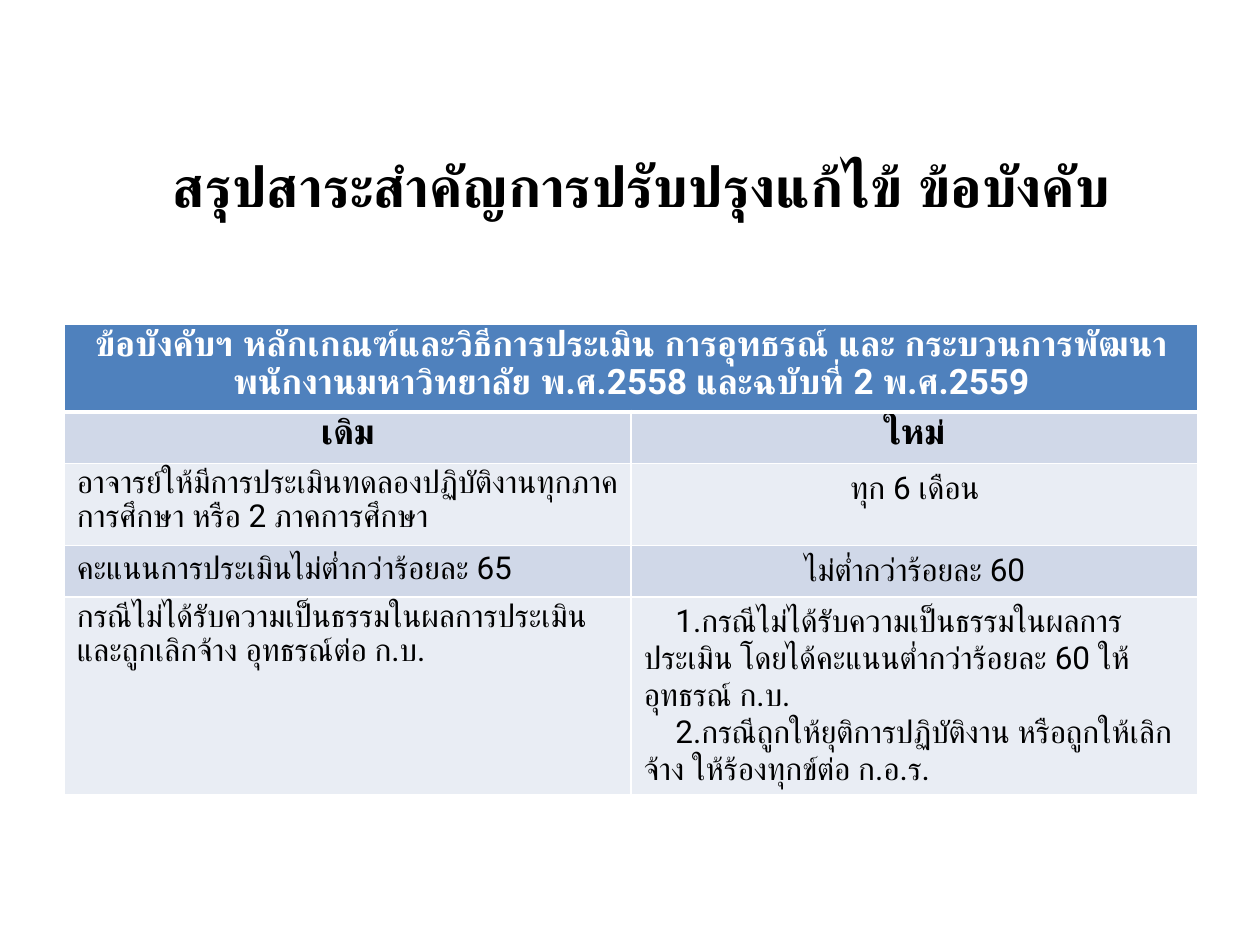
from lxml import etree
from pptx import Presentation
from pptx.dml.color import RGBColor
from pptx.enum.text import MSO_ANCHOR, PP_ALIGN as Align
from pptx.oxml.ns import qn
from pptx.util import Inches, Pt

FONT = "Roboto"
BLACK = RGBColor(0x00, 0x00, 0x00)
WHITE = RGBColor(0xFF, 0xFF, 0xFF)
BLUE = RGBColor(0x4F, 0x81, 0xBD)
BAND_DARK = RGBColor(0xD0, 0xD8, 0xE8)
BAND_LIGHT = RGBColor(0xE9, 0xED, 0xF4)
TIGHT = 0.95

TITLE = "สรุปสาระสำคัญการปรับปรุงแก้ไข้ ข้อบังคับ"
HEADING = ("ข้อบังคับฯ หลักเกณฑ์และวิธีการประเมิน การอุทธรณ์ และ "
           "กระบวนการพัฒนาพนักงานมหาวิทยาลัย พ.ศ.2558 และฉบับที่ 2 พ.ศ.2559")
COLUMN_HEADS = ["เดิม", "ใหม่"]
OLD_RULES = [
    "อาจารย์ให้มีการประเมินทดลองปฏิบัติงานทุกภาคการศึกษา หรือ 2 ภาคการศึกษา",
    "คะแนนการประเมินไม่ต่ำกว่าร้อยละ 65",
    "กรณีไม่ได้รับความเป็นธรรมในผลการประเมินและถูกเลิกจ้าง อุทธรณ์ต่อ ก.บ.",
]
NEW_RULES = ["ทุก 6 เดือน", "ไม่ต่ำกว่าร้อยละ 60"]
APPEALS = [
    "1.กรณีไม่ได้รับความเป็นธรรมในผลการประเมิน โดยได้คะแนนต่ำกว่าร้อยละ 60 ให้อุทธรณ์ ก.บ.",
    "2.กรณีถูกให้ยุติการปฏิบัติงาน หรือถูกให้เลิกจ้าง ให้ร้องทุกข์ต่อ ก.อ.ร.",
]
ROW_HEIGHTS = [0.7, 0.41, 0.65, 0.41, 1.56]


def write(tf, *lines, size=18, bold=False, color=BLACK, align=Align.LEFT,
          spacing=1.0, indent=0):
    for i, line in enumerate(lines):
        p = tf.add_paragraph() if i else tf.paragraphs[0]
        p.alignment = align
        p.line_spacing = spacing
        if indent:
            p._p.get_or_add_pPr().set("indent", str(Inches(indent)))
        r = p.add_run()
        r.text = line
        r.font.name = FONT
        r.font.size = Pt(size)
        r.font.bold = bold
        r.font.color.rgb = color


def set_borders(cell, **widths):
    tcPr = cell._tc.get_or_add_tcPr()
    for i, side in enumerate(("L", "R", "T", "B")):
        ln = etree.Element(qn(f"a:ln{side}"), w=str(Pt(widths.get(side, 1))))
        fill = etree.SubElement(ln, qn("a:solidFill"))
        etree.SubElement(fill, qn("a:srgbClr"), val=str(WHITE))
        tcPr.insert(i, ln)


def style_table(table):
    for r, height in enumerate(ROW_HEIGHTS):
        table.rows[r].height = Inches(height)
        for cell in table.rows[r].cells:
            cell.fill.solid()
            band = BAND_DARK if r % 2 else BAND_LIGHT
            cell.fill.fore_color.rgb = band if r else BLUE
            set_borders(cell, T=3 if r == 1 else 1, B=1 if r else 3)


def add_rules_table(slide):
    table = slide.shapes.add_table(
        len(ROW_HEIGHTS), 2, Inches(0.51), Inches(2.57),
        Inches(9), Inches(sum(ROW_HEIGHTS))).table
    style_table(table)
    table.cell(0, 0).merge(table.cell(0, 1))
    write(table.cell(0, 0).text_frame, HEADING, size=20, bold=True,
          color=WHITE, align=Align.CENTER, spacing=TIGHT)
    for c, text in enumerate(COLUMN_HEADS):
        write(table.cell(1, c).text_frame, text, size=20, bold=True,
              align=Align.CENTER, spacing=TIGHT)
    for r, text in enumerate(OLD_RULES, 2):
        write(table.cell(r, 0).text_frame, text, spacing=TIGHT)
    for r, text in enumerate(NEW_RULES, 2):
        write(table.cell(r, 1).text_frame, text, align=Align.CENTER)
    write(table.cell(4, 1).text_frame, *APPEALS, indent=0.25)


def add_title(slide):
    sp = slide.shapes.title
    sp.left, sp.top = Inches(0.59), Inches(0.92)
    sp.width, sp.height = Inches(9), Inches(1.09)
    sp.text_frame.vertical_anchor = MSO_ANCHOR.MIDDLE
    write(sp.text_frame, TITLE, size=32, bold=True, align=Align.CENTER)


def main():
    prs = Presentation()
    prs.slide_width, prs.slide_height = Inches(10), Inches(7.5)
    slide = prs.slides.add_slide(prs.slide_layouts[5])
    add_title(slide)
    add_rules_table(slide)
    prs.save("out.pptx")


if __name__ == "__main__":
    main()
